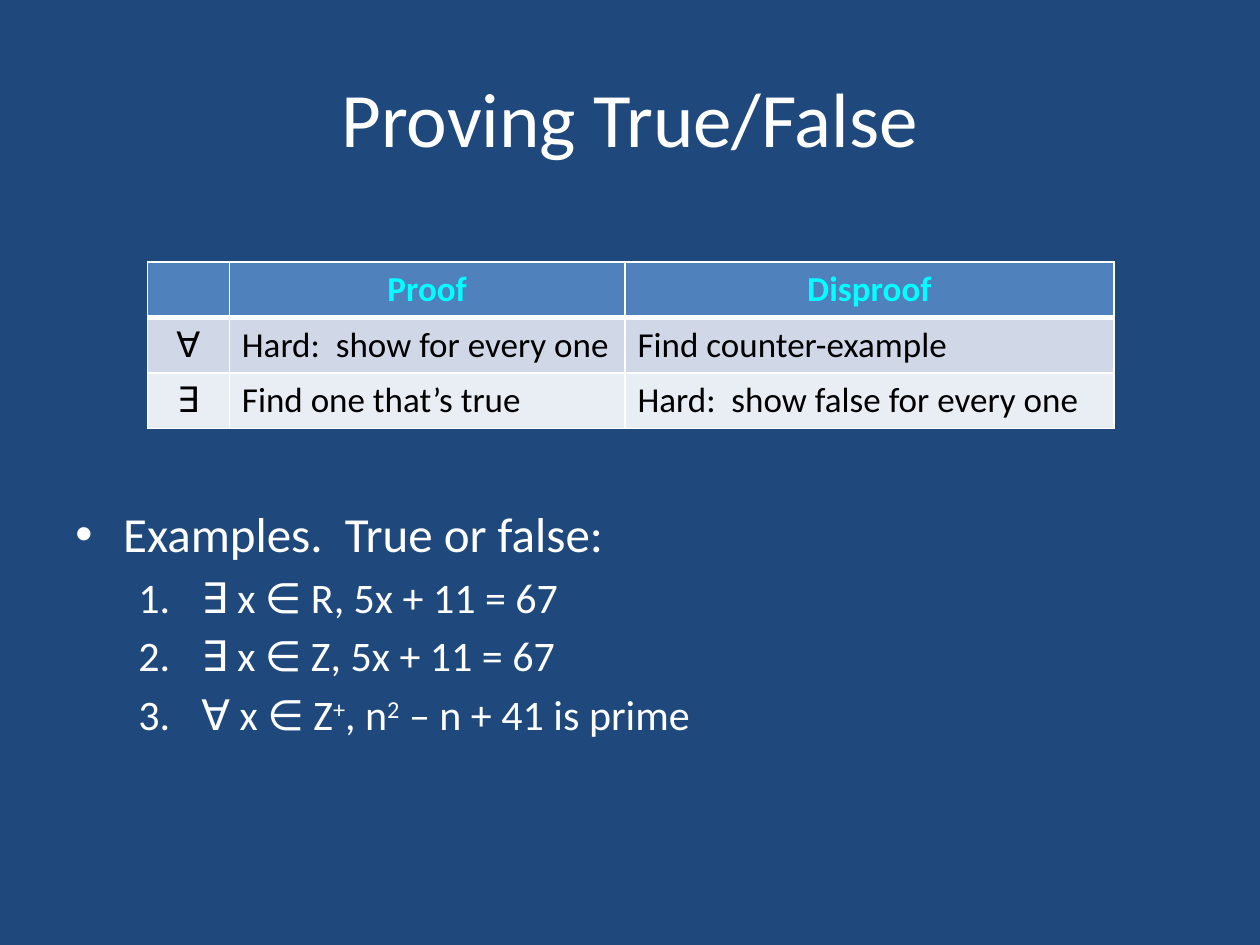
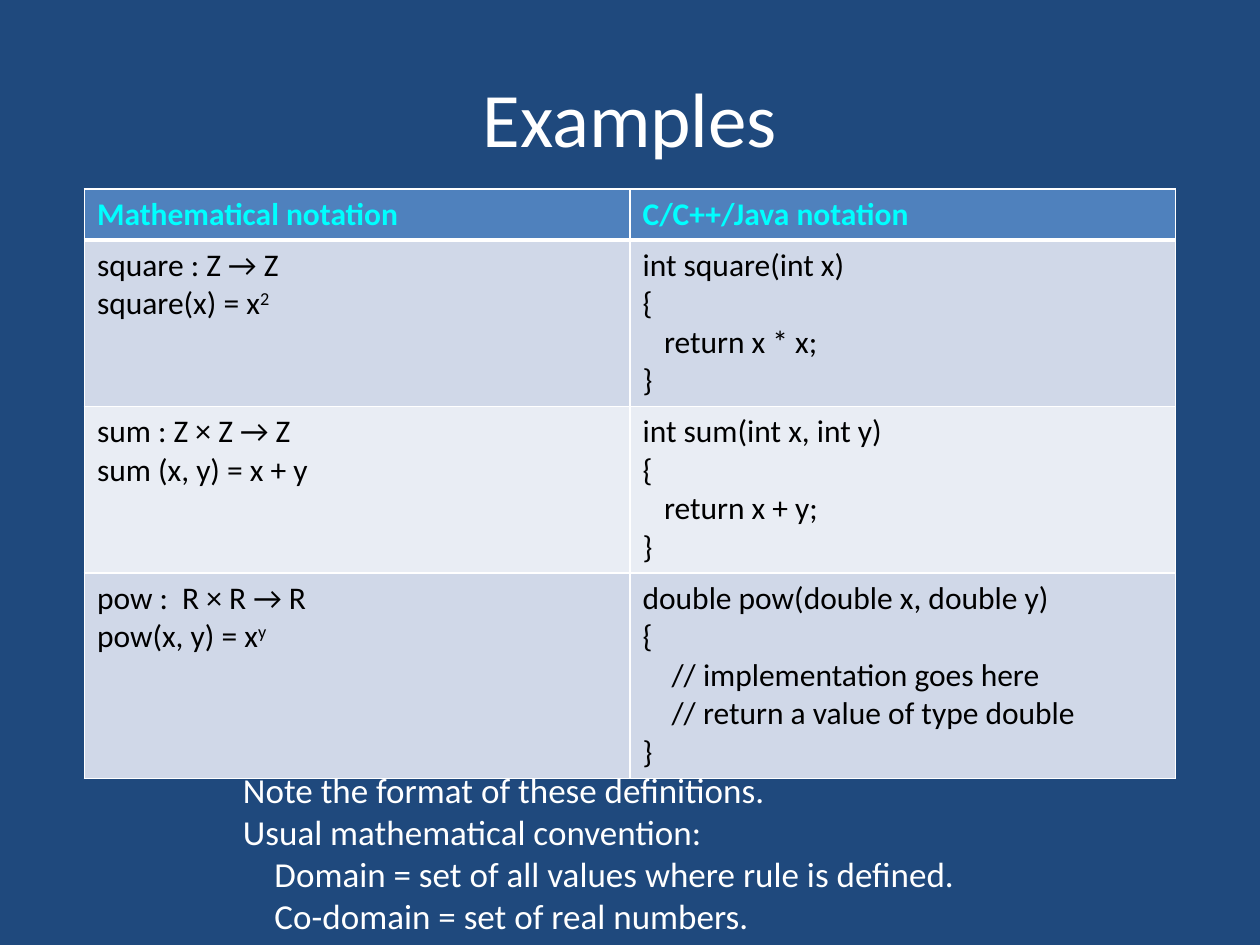
from lxml import etree
from pptx import Presentation
from pptx.dml.color import RGBColor
from pptx.enum import text
from pptx.oxml import ns
from pptx.util import Inches, Pt

FONT = "Calibri"
NAVY, WHITE, BLACK = "1F497D", "FFFFFF", "000000"
HEAD_FILL, HEAD_TEXT = "4F81BD", "00FFFF"
BANDS = ["D0D8E8", "E9EDF4"]


def color(value):
    """Turn a hex string into a colour."""
    return RGBColor.from_string(value)


def add_runs(p, line, size, tint, bold=False):
    """Write a line into a paragraph, with ^marked^ parts raised."""
    for i, part in enumerate(line.split("^")):
        if part:
            r = p.add_run()
            r.text = part
            r.font.name, r.font.size, r.font.bold = FONT, Pt(size), bold
            r.font.color.rgb = color(tint)
            if i % 2:
                r._r.get_or_add_rPr().set("baseline", "30000")


def set_indent(p, left, hanging=0):
    """Set the left margin and hanging indent of a paragraph."""
    pPr = p._p.get_or_add_pPr()
    pPr.set("marL", str(Inches(left)))
    pPr.set("indent", str(-Inches(hanging)))
    return pPr


def add_lines(tf, lines, size, tint, bold=False, align=None):
    """Fill a text frame with lines, each a string or an (indent, string) pair."""
    for i, line in enumerate(lines):
        p = tf.add_paragraph() if i else tf.paragraphs[0]
        indent, words = (0, line) if isinstance(line, str) else line
        if indent:
            set_indent(p, indent)
        if align is not None:
            p.alignment = align
        add_runs(p, words, size, tint, bold)


def add_titled_slide(prs, title):
    """Add a title-only slide with the shared title style."""
    s = prs.slides.add_slide(prs.slide_layouts[5])
    sp = s.shapes.title
    sp.left, sp.top, sp.width, sp.height = map(Inches, (0.5, 0.3, 9, 1.25))
    tf = sp.text_frame
    tf.vertical_anchor = text.MSO_ANCHOR.MIDDLE
    add_lines(tf, [title], 44, WHITE, align=text.PP_ALIGN.CENTER)
    return s


def add_text_box(s, left, top, width, height):
    """Add a wrapping text box and return its text frame."""
    tf = s.shapes.add_textbox(*map(Inches, (left, top, width, height))).text_frame
    tf.word_wrap = True
    return tf


def set_borders(cell, top, bottom):
    """Draw white cell borders with the given top and bottom widths."""
    tcPr = cell._tc.get_or_add_tcPr()
    for side, width in zip("LRTB", (1, 1, top, bottom)):
        ln = etree.SubElement(tcPr, ns.qn(f"a:ln{side}"), w=str(Pt(width)))
        fill = etree.SubElement(ln, ns.qn("a:solidFill"))
        etree.SubElement(fill, ns.qn("a:srgbClr"), val=WHITE)


def add_grid(s, left, top, widths, heights, rows, size, centered):
    """Add a banded table; centered lists the (row, column) cells to centre."""
    frame = s.shapes.add_table(len(rows), len(widths), Inches(left), Inches(top),
                               Inches(sum(widths)), Inches(sum(heights)))
    table = frame.table
    for column, width in zip(table.columns, widths):
        column.width = Inches(width)
    for i, row in enumerate(rows):
        table.rows[i].height = Inches(heights[i])
        for j, lines in enumerate(row):
            cell = table.cell(i, j)
            set_borders(cell, 3 if i == 1 else 1, 1 if i else 3)
            cell.fill.solid()
            cell.fill.fore_color.rgb = color(BANDS[(i - 1) % 2] if i else HEAD_FILL)
            align = text.PP_ALIGN.CENTER if (i, j) in centered else None
            add_lines(cell.text_frame, lines, size, BLACK if i else HEAD_TEXT,
                      bold=not i, align=align)


def add_numbered_list(s, heading, items):
    """Add a bulleted heading followed by numbered items."""
    tf = add_text_box(s, 0.5, 3.95, 9, 2.2)
    p = tf.paragraphs[0]
    pPr = set_indent(p, 0.38, 0.38)
    etree.SubElement(pPr, ns.qn("a:buFont"), typeface="Arial")
    etree.SubElement(pPr, ns.qn("a:buChar"), char="•")
    add_runs(p, heading, 28, WHITE)
    for item in items:
        p = tf.add_paragraph()
        p.level = 1
        p.space_before = Pt(4.8)
        pPr = set_indent(p, 1, 0.5)
        etree.SubElement(pPr, ns.qn("a:buFont"), typeface=FONT)
        etree.SubElement(pPr, ns.qn("a:buAutoNum"), type="arabicPeriod")
        add_runs(p, item, 24, WHITE)


def build_proving(prs):
    """Build the slide on proving and disproving quantified statements."""
    s = add_titled_slide(prs, "Proving True/False")
    rows = [
        [[], ["Proof"], ["Disproof"]],
        [["∀"], ["Hard:  show for every one"], ["Find counter-example"]],
        [["∃"], ["Find one that’s true"], ["Hard:  show false for every one"]],
    ]
    add_grid(s, 1.17, 2.08, [0.65, 3.14, 3.88], [0.44] * 3, rows, 20,
             [(0, 1), (0, 2), (1, 0), (2, 0)])
    add_numbered_list(s, "Examples.  True or false:", [
        "∃ x ∈ R, 5x + 11 = 67",
        "∃ x ∈ Z, 5x + 11 = 67",
        "∀ x ∈ Z^+^, n^2^ – n + 41 is prime",
    ])


def build_examples(prs):
    """Build the slide comparing function notations."""
    s = add_titled_slide(prs, "Examples")
    rows = [
        [["Mathematical notation"], ["C/C++/Java notation"]],
        [["square : Z → Z", "square(x) = x^2^"],
         ["int square(int x)", "{", (0.17, "return x * x;"), "}"]],
        [["sum : Z × Z → Z", "sum (x, y) = x + y"],
         ["int sum(int x, int y)", "{", (0.17, "return x + y;"), "}"]],
        [["pow :  R × R → R", "pow(x, y) = x^y^"],
         ["double pow(double x, double y)", "{",
          (0.23, "// implementation goes here"),
          (0.23, "// return a value of type double"), "}"]],
    ]
    add_grid(s, 0.67, 1.5, [4.33] * 2, [0.4, 1.32, 1.32, 1.63], rows, 18, [])
    tf = add_text_box(s, 1.83, 6.05, 6.25, 1.45)
    add_lines(tf, [
        "Note the format of these definitions.",
        "Usual mathematical convention:",
        (0.25, "Domain = set of all values where rule is defined."),
        (0.25, "Co-domain = set of real numbers."),
    ], 20, WHITE)


def main():
    """Build and save the presentation."""
    prs = Presentation()
    prs.slide_width, prs.slide_height = Inches(10), Inches(7.5)
    fill = prs.slide_master.background.fill
    fill.solid()
    fill.fore_color.rgb = color(NAVY)
    build_proving(prs)
    build_examples(prs)
    prs.save("out.pptx")


if __name__ == "__main__":
    main()
